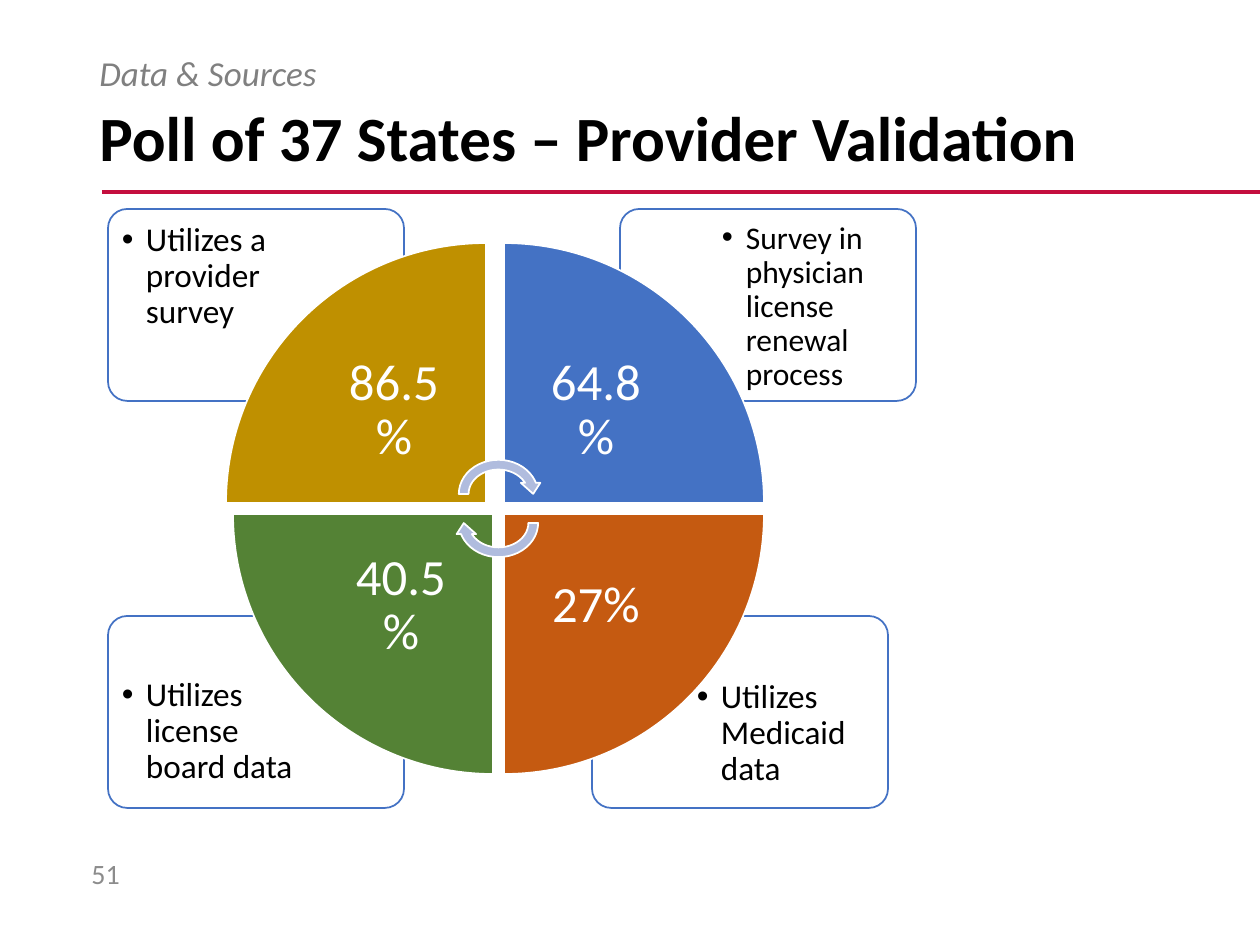
from dataclasses import dataclass
from typing import Optional

from lxml import etree
from pptx import Presentation
from pptx.dml.color import RGBColor
from pptx.enum.shapes import MSO_CONNECTOR, MSO_SHAPE
from pptx.enum.text import MSO_ANCHOR, PP_ALIGN
from pptx.oxml.ns import qn
from pptx.util import Emu, Pt

LINE = MSO_CONNECTOR.STRAIGHT
CARD_SHAPE = MSO_SHAPE.ROUNDED_RECTANGLE
WEDGE_SHAPE = MSO_SHAPE.PIE_WEDGE
ARROW_SHAPE = MSO_SHAPE.CIRCULAR_ARROW
TOP, MIDDLE = MSO_ANCHOR.TOP, MSO_ANCHOR.MIDDLE
LEFT, CENTER = PP_ALIGN.LEFT, PP_ALIGN.CENTER

PX_PER_INCH = 126
SLIDE_WIDTH, SLIDE_HEIGHT = 1260, 945
CARD_WIDTH, CARD_HEIGHT = 296, 192
CARD_TEXT_WIDTH, CARD_TEXT_HEIGHT = 199, 136
CARD_PAD = 4
BULLET_INDENT = 24
WEDGE_SIZE, WEDGE_TEXT_SIZE = 260, 184
ARROW_WIDTH, ARROW_HEIGHT = 89, 78


@dataclass(frozen=True)
class Theme:
    font: str = "Calibri"
    black: str = "000000"
    white: str = "FFFFFF"
    kicker: str = "808080"
    number: str = "8C8C8C"
    rule: str = "C40E3E"
    blue: str = "4472C4"
    gold: str = "BF9000"
    orange: str = "C55A11"
    green: str = "548235"
    arrow: str = "B0BCDE"
    title_size: int = 36
    kicker_size: int = 20
    number_size: int = 16
    share_size: int = 29
    card_size: int = 19
    small_card_size: int = 18


THEME = Theme()


@dataclass(frozen=True)
class Quadrant:
    share: str
    label: str
    color: str
    rotation: int
    card_left: int
    wedge_left: int
    is_right: bool
    is_bottom: bool
    label_size: int = THEME.card_size
    label_inset: int = 10

    @property
    def card_top(self) -> int:
        return 616 if self.is_bottom else 209

    @property
    def wedge_top(self) -> int:
        return 514 if self.is_bottom else 243


QUADRANTS = (
    Quadrant("27%", "Utilizes Medicaid data", THEME.orange, 180, 592, 504, True, True,
             label_inset=12),
    Quadrant("40.5%", "Utilizes license board data", THEME.green, 270, 108, 233, False, True),
    Quadrant("64.8%", "Survey in physician license renewal process", THEME.blue, 90, 620, 504,
             True, False, label_size=THEME.small_card_size, label_inset=9),
    Quadrant("86.5%", "Utilizes a provider survey", THEME.gold, 0, 108, 226, False, False),
)


def px(length: int) -> Emu:
    return Emu(round(length * 914400 / PX_PER_INCH))


def rgb(color: str) -> RGBColor:
    return RGBColor.from_string(color)


def add_bullet(para) -> None:
    properties = para._p.get_or_add_pPr()
    properties.set("marL", str(px(BULLET_INDENT)))
    properties.set("indent", str(-px(BULLET_INDENT)))
    etree.SubElement(properties, qn("a:buFont")).set("typeface", "Arial")
    etree.SubElement(properties, qn("a:buChar")).set("char", "•")


def add_text(page, text: str, *, left: int, top: int, width: int, height: int, size: int,
             color: str, bold: bool = False, italic: bool = False, anchor=TOP, align=LEFT,
             inset: Optional[int] = None, spacing: float = 0.9, bullet: bool = False) -> None:
    frame = page.shapes.add_textbox(px(left), px(top), px(width), px(height)).text_frame
    frame.word_wrap = True
    frame.vertical_anchor = anchor
    if inset is not None:
        frame.margin_left = frame.margin_right = px(inset)
        frame.margin_top = frame.margin_bottom = px(inset)
    para = frame.paragraphs[0]
    para.alignment = align
    para.line_spacing = spacing
    if bullet:
        add_bullet(para)
    span = para.add_run()
    span.text = text
    span.font.name = THEME.font
    span.font.size = Pt(size)
    span.font.bold = bold
    span.font.italic = italic
    span.font.color.rgb = rgb(color)


def add_block(page, kind, left: int, top: int, width: int, height: int, fill: str,
              line: str = THEME.white, rotation: int = 0):
    block = page.shapes.add_shape(kind, px(left), px(top), px(width), px(height))
    block.shadow.inherit = False
    block.fill.solid()
    block.fill.fore_color.rgb = rgb(fill)
    block.line.color.rgb = rgb(line)
    block.line.width = Pt(1)
    block.rotation = rotation
    return block


def add_rule(page, left: int, right: int, y: int) -> None:
    rule = page.shapes.add_connector(LINE, px(left), px(y), px(right), px(y))
    rule.line.color.rgb = rgb(THEME.rule)
    rule.line.width = Pt(2.25)
    etree.SubElement(rule._element.spPr, qn("a:effectLst"))


def add_card(page, quadrant: Quadrant) -> None:
    """Draw the card with its label in the corner away from the wheel."""
    left, top = quadrant.card_left, quadrant.card_top
    card = add_block(page, CARD_SHAPE, left, top, CARD_WIDTH, CARD_HEIGHT,
                     THEME.white, THEME.blue)
    card.adjustments[0] = 0.1
    shift_x = CARD_WIDTH - CARD_TEXT_WIDTH - CARD_PAD if quadrant.is_right else CARD_PAD
    shift_y = CARD_HEIGHT - CARD_TEXT_HEIGHT - CARD_PAD if quadrant.is_bottom else CARD_PAD
    add_text(page, quadrant.label, left=left + shift_x, top=top + shift_y,
             width=CARD_TEXT_WIDTH, height=CARD_TEXT_HEIGHT, size=quadrant.label_size,
             color=THEME.black, inset=quadrant.label_inset, bullet=True)


def add_wedge(page, quadrant: Quadrant) -> None:
    """Draw the wedge with its share next to the centre of the wheel."""
    left, top = quadrant.wedge_left, quadrant.wedge_top
    add_block(page, WEDGE_SHAPE, left, top, WEDGE_SIZE, WEDGE_SIZE, quadrant.color,
              rotation=quadrant.rotation)
    shift = WEDGE_SIZE - WEDGE_TEXT_SIZE
    add_text(page, quadrant.share, left=left + (0 if quadrant.is_right else shift),
             top=top + (0 if quadrant.is_bottom else shift),
             width=WEDGE_TEXT_SIZE, height=WEDGE_TEXT_SIZE, size=THEME.share_size,
             color=THEME.white, anchor=MIDDLE, align=CENTER, inset=29)


def main() -> None:
    deck = Presentation()
    deck.slide_width, deck.slide_height = px(SLIDE_WIDTH), px(SLIDE_HEIGHT)
    page = deck.slides.add_slide(deck.slide_layouts[6])

    add_rule(page, 102, SLIDE_WIDTH, 192)
    add_text(page, "Poll of 37 States – Provider Validation", left=87, top=50, width=1086,
             height=183, size=THEME.title_size, color=THEME.black, bold=True, anchor=MIDDLE)
    add_text(page, "51", left=79, top=848, width=69, height=50, size=THEME.number_size,
             color=THEME.number, anchor=MIDDLE, spacing=1.0)
    add_text(page, "Data & Sources", left=87, top=50, width=1086, height=62,
             size=THEME.kicker_size, color=THEME.kicker, italic=True)

    for quadrant in QUADRANTS:
        add_card(page, quadrant)
    for quadrant in QUADRANTS:
        add_wedge(page, quadrant)
    for top, rotation in ((455, 0), (484, 180)):
        add_block(page, ARROW_SHAPE, 454, top, ARROW_WIDTH, ARROW_HEIGHT, THEME.arrow,
                  rotation=rotation)

    deck.save("out.pptx")


if __name__ == "__main__":
    main()
